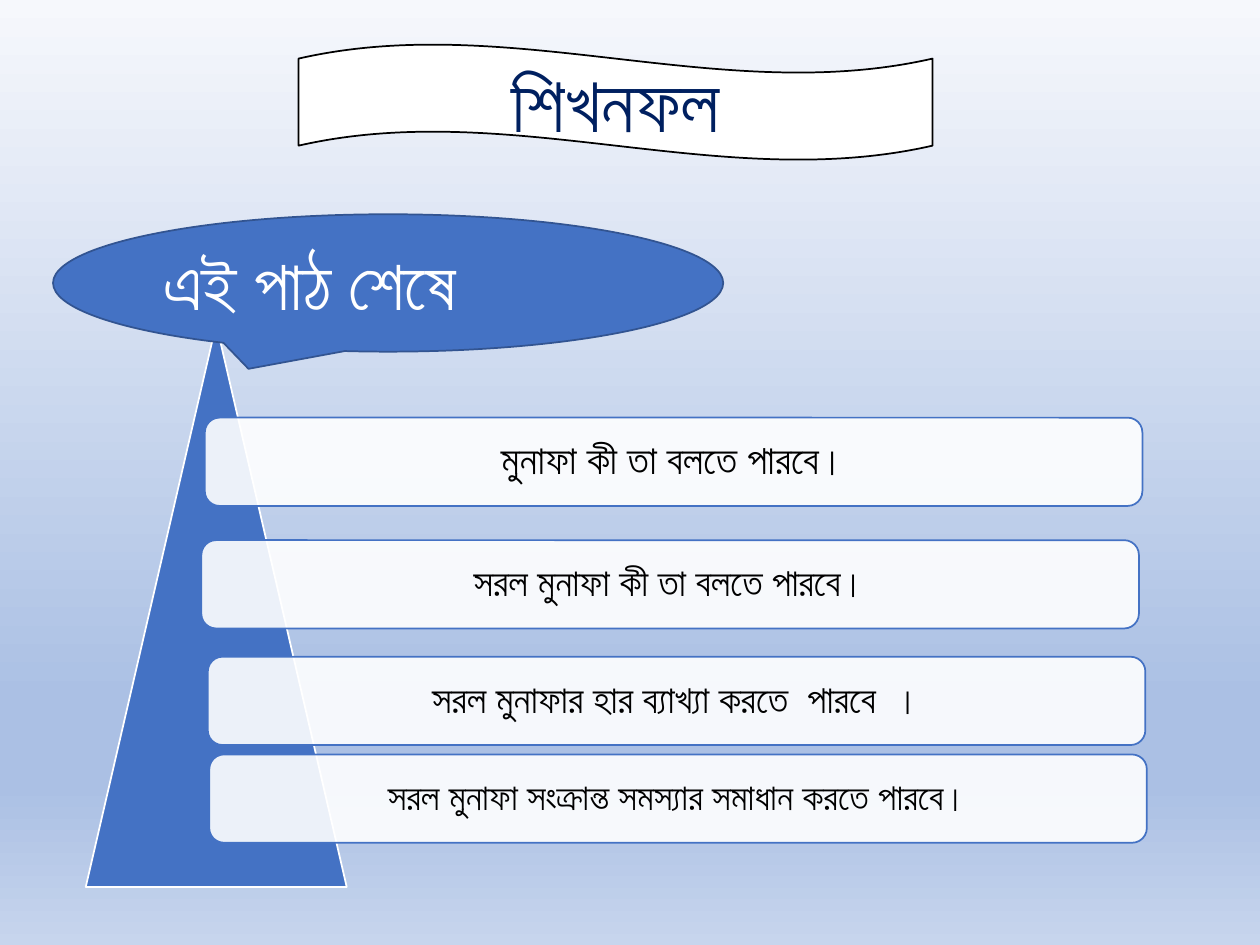
from copy import deepcopy

from pptx import Presentation
from pptx import util as u
from pptx.dml.color import RGBColor
from pptx.enum import shapes, text
from pptx.oxml import ns, xmlchemy

WHITE = RGBColor(0xFF, 0xFF, 0xFF)
BLACK = RGBColor(0, 0, 0)
NAVY = RGBColor(0x00, 0x20, 0x60)
BLUE = RGBColor(0x44, 0x72, 0xC4)
DARK_BLUE = RGBColor(0x32, 0x54, 0x91)
BACKGROUND = [(0, RGBColor(0xF6, 0xF8, 0xFC)), (0.74, RGBColor(0xAB, 0xC0, 0xE4)),
              (0.83, RGBColor(0xAB, 0xC0, 0xE4)), (1, RGBColor(0xC7, 0xD5, 0xED))]


def add_shape(kind, left, top, width, height, fill, line):
    sp = s.shapes.add_shape(kind, u.Cm(left), u.Cm(top), u.Cm(width), u.Cm(height))
    sp.shadow.inherit = False
    sp.fill.solid()
    sp.fill.fore_color.rgb = fill
    sp.line.color.rgb = line
    sp.line.width = u.Pt(1)
    return sp


def write(sp, words, size, color, align=text.PP_ALIGN.CENTER):
    tf = sp.text_frame
    tf.word_wrap = True
    tf.vertical_anchor = text.MSO_ANCHOR.MIDDLE
    p = tf.paragraphs[0]
    p.text = words
    p.alignment = align
    p.font.name = "Calibri"
    p.font.size = u.Pt(size)
    p.font.color.rgb = color
    return p


prs = Presentation()
prs.slide_width, prs.slide_height = u.Cm(25.4), u.Cm(19.05)
s = prs.slides.add_slide(prs.slide_layouts[6])

# Background: four-stop gradient, running downwards
fill = s.background.fill
fill.gradient()
fill.gradient_angle = 270
stops = s.element.find(".//" + ns.qn("a:gsLst"))
for gs in list(stops):
    stops.append(deepcopy(gs))
for stop, (position, color) in zip(fill.gradient_stops, BACKGROUND):
    stop.position = position
    stop.color.rgb = color

# Triangle behind the list
add_shape(shapes.MSO_SHAPE.ISOSCELES_TRIANGLE, 1.73, 6.53, 5.26, 11.35, BLUE, WHITE)

# Learning outcomes
outcomes = [
    (4.13, 8.42, 23, "মুনাফা কী তা বলতে পারবে।"),
    (4.06, 10.89, 22, "সরল মুনাফা কী তা বলতে পারবে।"),
    (4.19, 13.24, 22, "সরল মুনাফার হার ব্যাখ্যা করতে  পারবে  ।"),
    (4.22, 15.21, 21, "সরল মুনাফা সংক্রান্ত সমস্যার সমাধান করতে পারবে।"),
]
for left, top, size, words in outcomes:
    sp = add_shape(shapes.MSO_SHAPE.ROUNDED_RECTANGLE, left, top, 18.9, 1.78, WHITE, BLUE)
    color = sp.element.spPr.find(ns.qn("a:solidFill"))[0]
    color.append(xmlchemy.OxmlElement("a:alpha"))
    color[0].set("val", "90000")
    write(sp, words, size, BLACK).line_spacing = 0.9

# Callout
sp = add_shape(shapes.MSO_SHAPE.OVAL_CALLOUT, 1.07, 4.32, 13.51, 2.77, BLUE, DARK_BLUE)
write(sp, "এই পাঠ শেষে", 40, WHITE, text.PP_ALIGN.LEFT)

# Title banner
sp = add_shape(shapes.MSO_SHAPE.WAVE, 6.02, 0.89, 12.78, 2.34, WHITE, BLACK)
write(sp, "শিখনফল", 44, NAVY)

prs.save("out.pptx")
